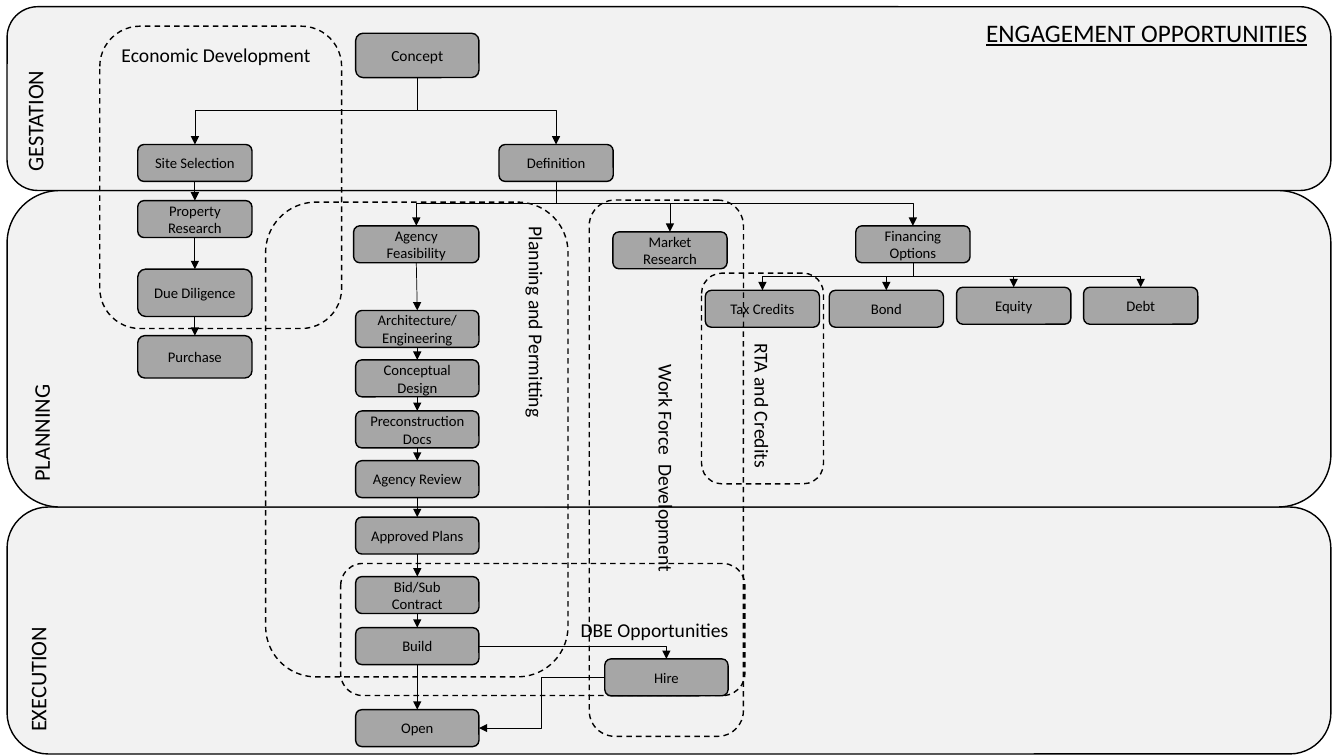
from itertools import pairwise

from lxml import etree
from pptx import Presentation
from pptx import util as u
from pptx.dml import color
from pptx.enum import dml, shapes, text
from pptx.oxml import ns

deck = Presentation()
CELL = u.Inches(1 / 6)
deck.slide_width, deck.slide_height = 80 * CELL, 45 * CELL
page = deck.slides.add_slide(deck.slide_layouts[5])
paint = color.RGBColor.from_string

ALIGN = text.PP_ALIGN
ANCHOR = text.MSO_ANCHOR
INK, BAND, BOX = "000000", "F2F2F2", "A6A6A6"


def write(shape, words, size=10.5, align=ALIGN.CENTER, anchor=ANCHOR.MIDDLE,
          vert=None, underline=None):
    frame = shape.text_frame
    frame.vertical_anchor = anchor
    if vert:
        shape.element.txBody.bodyPr.set("vert", vert)
    para = frame.paragraphs[0]
    para.alignment = align
    span = para.add_run()
    span.text = words
    span.font.name = "Calibri"
    span.font.size = u.Pt(size)
    span.font.underline = underline
    span.font.color.rgb = paint(INK)


def add_box(words, column, row, columns, rows, fill=None, rotation=0, **style):
    box = page.shapes.add_shape(
        shapes.MSO_SHAPE.ROUNDED_RECTANGLE,
        *(round(n * CELL) for n in (column, row, columns, rows)))
    box.shadow.inherit = False
    box.rotation = rotation
    box.line.color.rgb = paint(INK)
    box.line.width = u.Pt(1)
    if fill:
        box.fill.solid()
        box.fill.fore_color.rgb = paint(fill)
    else:
        box.fill.background()
        box.line.dash_style = dml.MSO_LINE.DASH
    write(box, words, **style)
    return box


for words, row, rows in [
    ("EXECUTION", 30.18, 14.7),
    ("PLANNING", 11.34, 18.84),
    ("GESTATION", 0.4, 10.94),
]:
    add_box(words, 0.42, row, 78.8, rows, fill=BAND, size=16,
            align=ALIGN.LEFT, anchor=ANCHOR.TOP, vert="vert270")

title = page.shapes.title
title.left, title.top, title.width, title.height = (
    round(n * CELL) for n in (58.1, 0.72, 20.5, 2.4))
title.text_frame.auto_size = text.MSO_AUTO_SIZE.NONE
title.text_frame.word_wrap = False
write(title, "ENGAGEMENT OPPORTUNITIES", size=18, align=ALIGN.LEFT,
      anchor=ANCHOR.TOP, underline=True)
title.element.getparent().append(title.element)

NARROW, WIDE, LOW = 6.8, 7.34, 2.2
SITE, SPINE = 11.6, 24.84
boxes = {}
for words, middle, row, columns, rows in [
    ("Site Selection", SITE, 8.6, NARROW, LOW),
    ("Property Research", SITE, 11.94, NARROW, LOW),
    ("Due Diligence", SITE, 16.02, NARROW, 2.82),
    ("Purchase", SITE, 19.98, NARROW, 2.52),
    ("Definition", 33.1, 8.6, NARROW, LOW),
    ("Market Research", 39.88, 13.8, NARROW, LOW),
    ("Financing Options", 54.34, 13.44, NARROW, LOW),
    ("Tax Credits", 45.38, 17.28, NARROW, LOW),
    ("Bond", 52.76, 17.28, NARROW, LOW),
    ("Equity", 60.34, 17.1, NARROW, LOW),
    ("Debt", 67.9, 17.1, NARROW, LOW),
    ("Agency Feasibility", 24.78, 13.44, 7.46, LOW),
    ("Architecture/ Engineering", SPINE, 18.48, WIDE, LOW),
    ("Conceptual Design", SPINE, 21.42, WIDE, LOW),
    ("Preconstruction Docs", SPINE, 24.46, WIDE, LOW),
    ("Agency Review", SPINE, 27.42, WIDE, LOW),
    ("Approved Plans", SPINE, 30.78, WIDE, LOW),
    ("Bid/Sub Contract", SPINE, 34.32, WIDE, LOW),
    ("Build", SPINE, 37.36, WIDE, LOW),
    ("Open", SPINE, 42.24, WIDE, LOW),
]:
    boxes[words] = add_box(words, middle - columns / 2, row, columns, rows, fill=BOX)
boxes["Concept"] = add_box("Concept", SPINE - WIDE / 2, 1.98, WIDE, 2.64,
                           fill=BOX, size=11)

for words, place, style in [
    ("Economic Development", (5.94, 1.56, 14.4, 18),
     dict(align=ALIGN.LEFT, anchor=ANCHOR.TOP)),
    ("Planning and Permitting", (10.68, 17.16, 28.26, 18),
     dict(align=ALIGN.LEFT, anchor=ANCHOR.TOP, rotation=90)),
    ("Work Force  Development", (23.7, 23.28, 31.92, 9.18), dict(rotation=90)),
    ("DBE Opportunities", (20.28, 33.54, 24.06, 7.86), dict(align=ALIGN.RIGHT)),
    ("RTA and Credits", (41.76, 16.26, 7.26, 12.54),
     dict(align=ALIGN.RIGHT, vert="vert")),
]:
    add_box(words, *place, size=14, **style)
boxes["Hire"] = add_box("Hire", 36, 39.22, WIDE, LOW, fill=BOX)

site_chain = ["Site Selection", "Property Research", "Due Diligence", "Purchase"]
permit_chain = ["Agency Feasibility", "Architecture/ Engineering", "Conceptual Design",
                "Preconstruction Docs", "Agency Review", "Approved Plans",
                "Bid/Sub Contract", "Build", "Open"]
branches = [
    ("Concept", 6.6, ["Site Selection", "Definition"]),
    ("Definition", 12.12, ["Agency Feasibility", "Market Research", "Financing Options"]),
    ("Financing Options", 16.46, ["Tax Credits", "Bond", "Equity", "Debt"]),
]
BOTTOM, TOP, LEFT, RIGHT = 2, 0, 1, 3
STRAIGHT, ELBOW = shapes.MSO_CONNECTOR.STRAIGHT, shapes.MSO_CONNECTOR.ELBOW
arrows = [(start, BOTTOM, end, TOP, STRAIGHT, None)
          for chain in (site_chain, permit_chain) for start, end in pairwise(chain)]
arrows += [(start, BOTTOM, end, TOP, ELBOW, rail)
           for start, rail, ends in branches for end in ends]
arrows += [("Hire", LEFT, "Open", RIGHT, ELBOW, None),
           ("Build", RIGHT, "Hire", TOP, ELBOW, None)]

for start, start_side, end, end_side, kind, rail in arrows:
    arrow = page.shapes.add_connector(kind, 0, 0, 0, 0)
    arrow.begin_connect(boxes[start], start_side)
    arrow.end_connect(boxes[end], end_side)
    arrow.line.color.rgb = paint(INK)
    arrow.line.width = u.Pt(0.5)
    props = arrow.element.spPr
    etree.SubElement(props.find(ns.qn("a:ln")), ns.qn("a:tailEnd"), type="triangle")
    etree.SubElement(props, ns.qn("a:effectLst"))
    shape_kind = props.find(ns.qn("a:prstGeom"))
    if start_side == RIGHT:
        shape_kind.set("prst", "bentConnector2")
    if rail:
        x1, y1, x2, y2 = arrow.begin_x, arrow.begin_y, arrow.end_x, arrow.end_y
        drop, reach = y2 - y1, abs(x2 - x1)
        arrow.left, arrow.top = (x1 + x2 - drop) // 2, (y1 + y2 - reach) // 2
        arrow.width, arrow.height = drop, reach
        frame = props.find(ns.qn("a:xfrm"))
        frame.set("rot", "16200000" if x2 > x1 else "5400000")
        frame.set("flipH", "1" if x2 > x1 else "0")
        bend = round((rail * CELL - y1) / drop * 100000)
        etree.SubElement(shape_kind.find(ns.qn("a:avLst")), ns.qn("a:gd"),
                         name="adj1", fmla=f"val {bend}")

deck.save("out.pptx")
